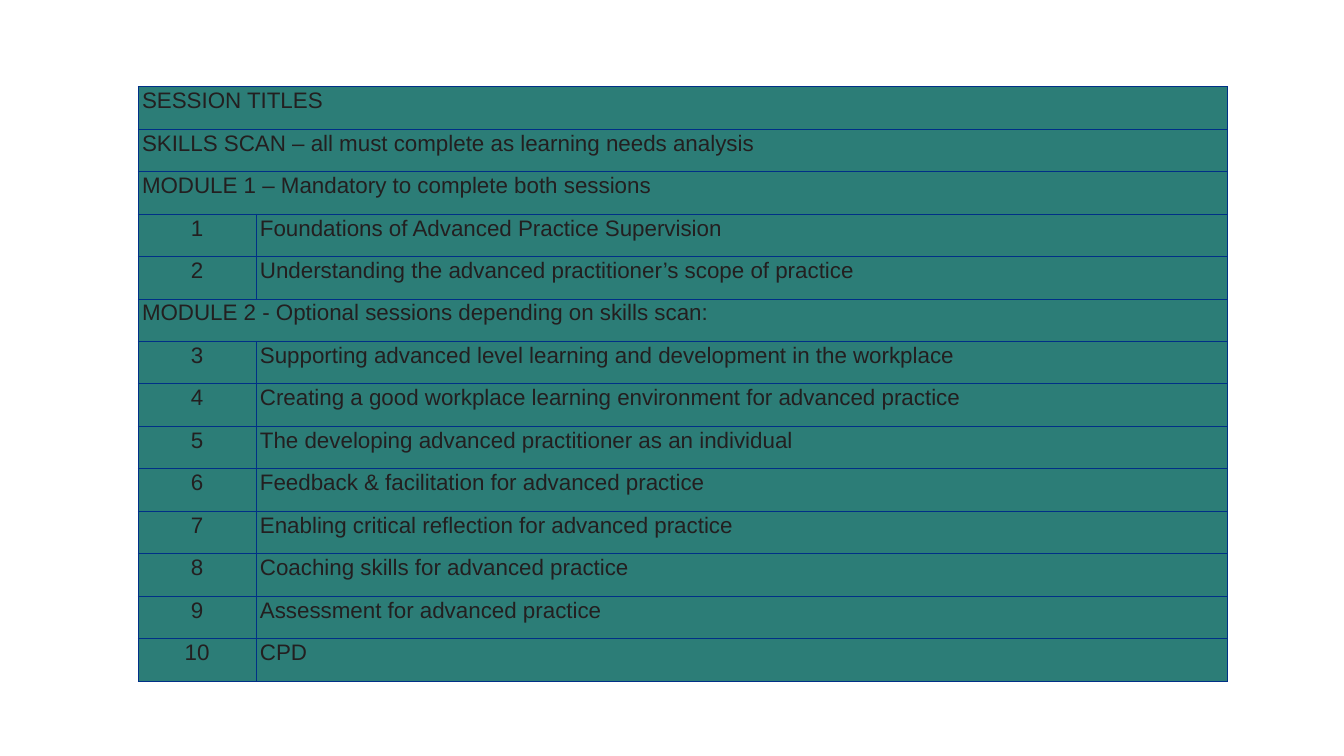
import lxml.etree
import pptx
import pptx.dml.color
import pptx.enum.text
import pptx.oxml.ns
import pptx.util

Cm = pptx.util.Cm
Pt = pptx.util.Pt
qn = pptx.oxml.ns.qn

TEAL = "2C7D77"
INK = "231F20"
BORDER_BLUE = "003087"


def colour(hex_value):
    return pptx.dml.color.RGBColor.from_string(hex_value)


def add_borders(cell, hex_value, width):
    properties = cell._tc.get_or_add_tcPr()
    for side in ("lnL", "lnR", "lnT", "lnB"):
        border = lxml.etree.SubElement(properties, qn(f"a:{side}"), w=str(width))
        line_fill = lxml.etree.SubElement(border, qn("a:solidFill"))
        lxml.etree.SubElement(line_fill, qn("a:srgbClr"), val=hex_value)


# Headings span both columns; sessions are numbered in order
HEADING, SESSION = "heading", "session"
programme = [
    (HEADING, "SESSION TITLES"),
    (HEADING, "SKILLS SCAN – all must complete as learning needs analysis"),
    (HEADING, "MODULE 1 – Mandatory to complete both sessions"),
    (SESSION, "Foundations of Advanced Practice Supervision"),
    (SESSION, "Understanding the advanced practitioner’s scope of practice"),
    (HEADING, "MODULE 2 - Optional sessions depending on skills scan:"),
    (SESSION, "Supporting advanced level learning and development in the workplace"),
    (SESSION, "Creating a good workplace learning environment for advanced practice"),
    (SESSION, "The developing advanced practitioner as an individual"),
    (SESSION, "Feedback & facilitation for advanced practice"),
    (SESSION, "Enabling critical reflection for advanced practice"),
    (SESSION, "Coaching skills for advanced practice"),
    (SESSION, "Assessment for advanced practice"),
    (SESSION, "CPD"),
]

# Slide
presentation = pptx.Presentation()
presentation.slide_width = Cm(33.87)
presentation.slide_height = Cm(19.05)
slide = presentation.slides.add_slide(presentation.slide_layouts[6])

# Table frame
column_widths = [Cm(2.97), Cm(24.49)]
row_height = Cm(1.07)
sessions = slide.shapes.add_table(
    len(programme), len(column_widths), Cm(3.48), Cm(2.18),
    sum(column_widths), row_height * len(programme),
).table
sessions.first_row = False
sessions.horz_banding = False
for column, width in zip(sessions.columns, column_widths):
    column.width = width
for row in sessions.rows:
    row.height = row_height

# Wording
session_number = 0
for row_index, (kind, title) in enumerate(programme):
    number_cell, title_cell = sessions.rows[row_index].cells
    if kind == HEADING:
        number_cell.merge(title_cell)
        number_cell.text = title
    else:
        session_number += 1
        number_cell.text = str(session_number)
        number_cell.text_frame.paragraphs[0].alignment = pptx.enum.text.PP_ALIGN.CENTER
        title_cell.text = title

# Cell look
cell_format = {
    "margin_left": Cm(0.1),
    "margin_right": Cm(0.1),
    "margin_top": Cm(0.05),
    "margin_bottom": Cm(0.05),
    "vertical_anchor": pptx.enum.text.MSO_ANCHOR.TOP,
}
font_format = {"name": "Arial", "size": Pt(16), "bold": False}
for cell in sessions.iter_cells():
    for attribute, value in cell_format.items():
        setattr(cell, attribute, value)
    add_borders(cell, BORDER_BLUE, Pt(0.5))
    cell.fill.solid()
    cell.fill.fore_color.rgb = colour(TEAL)
    font = cell.text_frame.paragraphs[0].font
    for attribute, value in font_format.items():
        setattr(font, attribute, value)
    font.color.rgb = colour(INK)

presentation.save("out.pptx")
